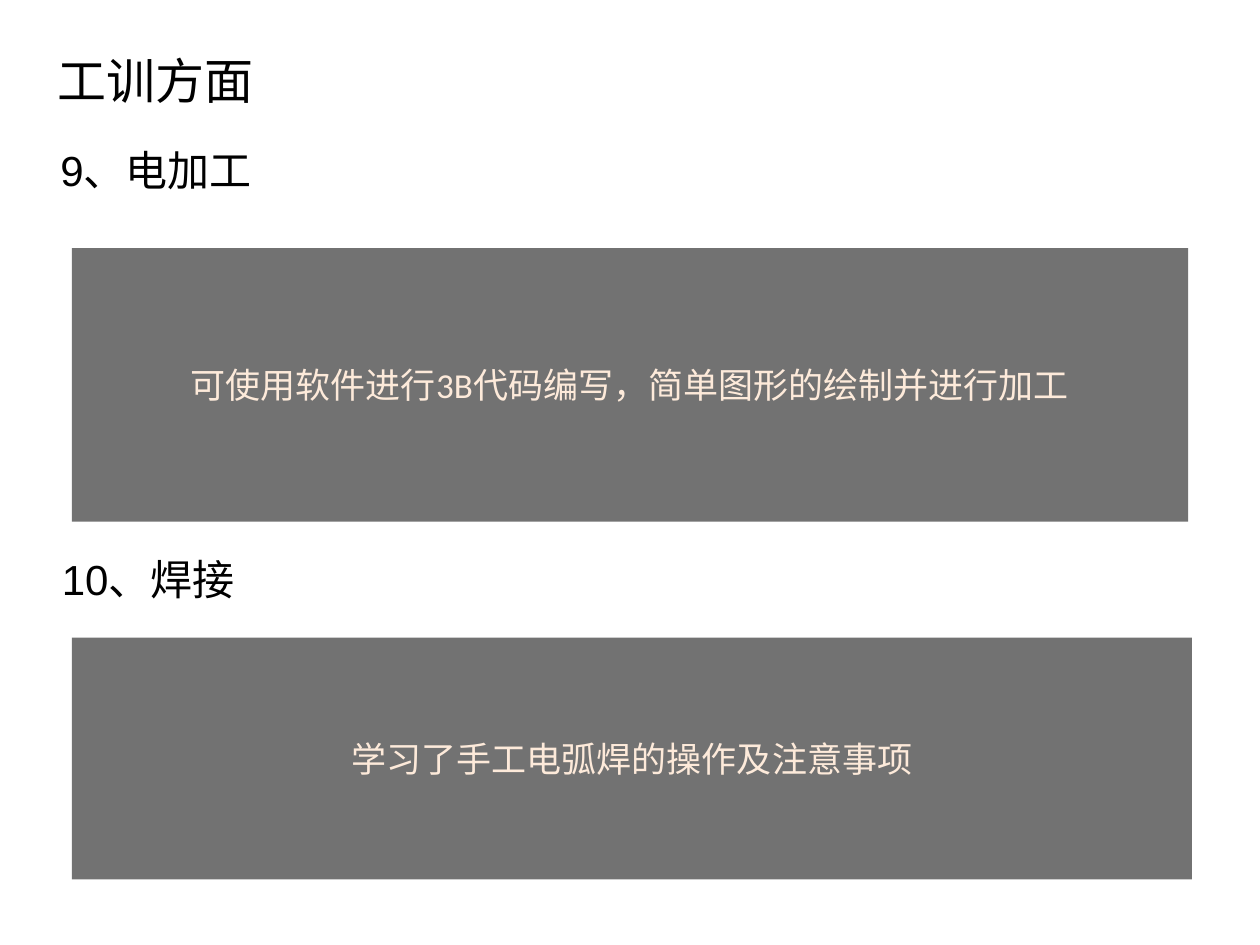
import pptx
import pptx.dml.color
import pptx.enum.shapes
import pptx.enum.text
import pptx.oxml
import pptx.oxml.ns
import pptx.util
from dataclasses import dataclass
from pptx.util import Inches


@dataclass(frozen=True)
class Theme:
    ink: str = "000000"
    panel: str = "333333"
    panel_text: str = "FDEADA"
    panel_alpha: int = 69000
    heading_size: int = 28
    section_size: int = 24
    body_size: int = 20
    heading_font: str = "Noto Sans CJK SC"
    section_font: str = "Arial"
    body_font: str = "Calibri"


theme = Theme()
align = pptx.enum.text.PP_ALIGN
anchor = pptx.enum.text.MSO_ANCHOR
auto_size = pptx.enum.text.MSO_AUTO_SIZE


def format_span(span, font, size, color):
    span.font.name = font
    span.font.size = pptx.util.Pt(size)
    span.font.color.rgb = pptx.dml.color.RGBColor.from_string(color)


deck = pptx.Presentation()
deck.slide_width = Inches(10)
deck.slide_height = Inches(7.5)
page = deck.slides.add_slide(deck.slide_layouts[0])
subtitle = page.placeholders[1].element
subtitle.getparent().remove(subtitle)

panels = [
    ("可使用软件进行3B代码编写，简单图形的绘制并进行加工", 1.97, 8.86, 2.17),
    ("学习了手工电弧焊的操作及注意事项", 5.06, 8.89, 1.92),
]
for text, top, width, height in panels:
    panel = page.shapes.add_shape(
        pptx.enum.shapes.MSO_SHAPE.RECTANGLE,
        Inches(0.57), Inches(top), Inches(width), Inches(height),
    )
    panel.shadow.inherit = False
    panel.line.fill.background()
    panel.fill.solid()
    panel.fill.fore_color.rgb = pptx.dml.color.RGBColor.from_string(theme.panel)
    color = panel.element.spPr.find(".//" + pptx.oxml.ns.qn("a:srgbClr"))
    alpha = pptx.oxml.parse_xml(
        f'<a:alpha {pptx.oxml.ns.nsdecls("a")} val="{theme.panel_alpha}"/>'
    )
    color.append(alpha)
    panel.text_frame.word_wrap = True
    panel.text_frame.vertical_anchor = anchor.MIDDLE
    para = panel.text_frame.paragraphs[0]
    para.text = text
    para.alignment = align.CENTER
    format_span(para.runs[0], theme.body_font, theme.body_size, theme.panel_text)

heading = page.shapes.add_textbox(Inches(0.36), Inches(0.35), Inches(1.77), Inches(0.57))
heading.text_frame.word_wrap = False
heading.text_frame.auto_size = auto_size.SHAPE_TO_FIT_TEXT
heading.text_frame.text = "工训方面"
format_span(heading.text_frame.paragraphs[0].runs[0],
            theme.heading_font, theme.heading_size, theme.ink)

machining = page.shapes.add_textbox(Inches(0.38), Inches(1.1), Inches(8.25), Inches(0.5))
machining.text_frame.word_wrap = True
machining.text_frame.auto_size = auto_size.SHAPE_TO_FIT_TEXT
for text, font in [("9、", theme.section_font), ("电加工", theme.body_font)]:
    span = machining.text_frame.paragraphs[0].add_run()
    span.text = text
    format_span(span, font, theme.section_size, theme.ink)

welding = page.shapes.title
welding.left, welding.top = Inches(0.39), Inches(4.13)
welding.width, welding.height = Inches(8.55), Inches(0.92)
welding.text_frame.text = "10、焊接"
welding.text_frame.vertical_anchor = anchor.MIDDLE
para = welding.text_frame.paragraphs[0]
para.alignment = align.LEFT
format_span(para.runs[0], theme.section_font, theme.section_size, theme.ink)

deck.save("out.pptx")
